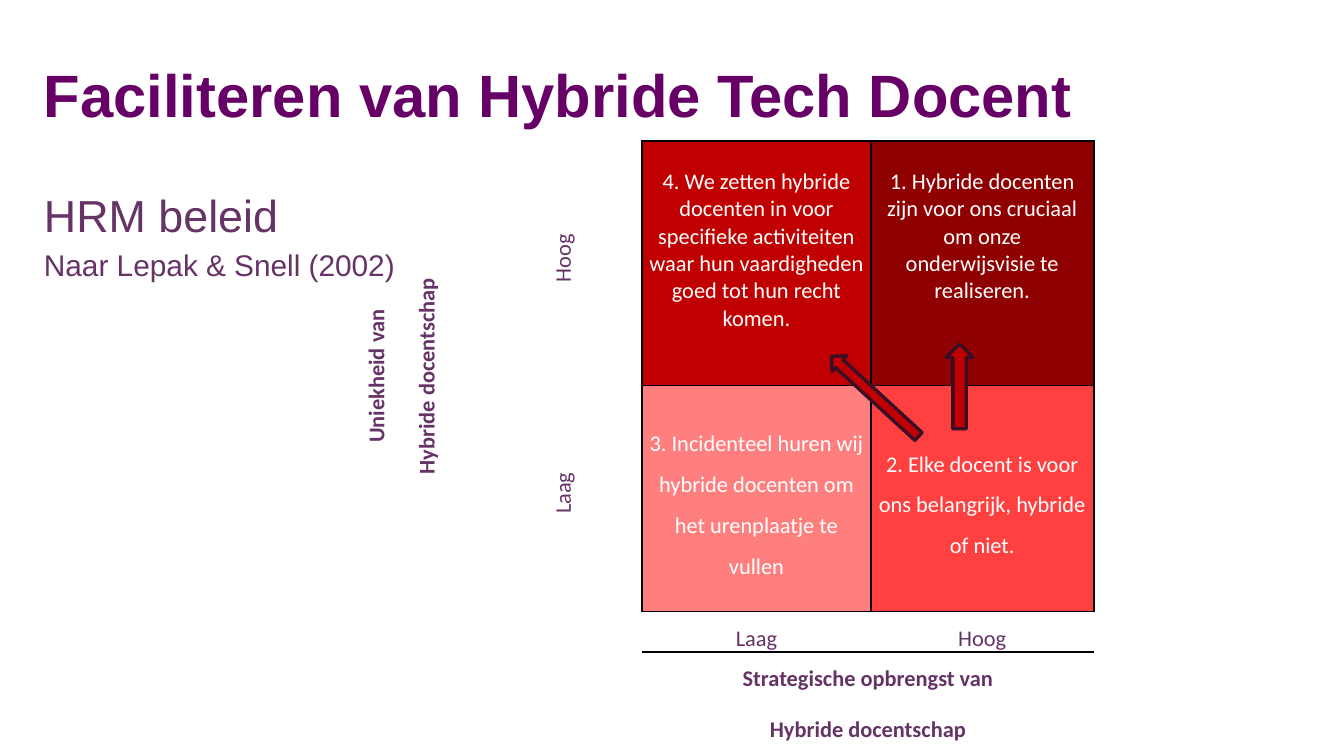
from lxml.etree import SubElement
from pptx import Presentation
from pptx.dml.color import RGBColor
from pptx.enum.shapes import MSO_SHAPE
from pptx.enum.text import MSO_ANCHOR, PP_ALIGN
from pptx.oxml.ns import qn
from pptx.util import Pt

NO_STYLE = "{2D5ABB26-0587-4C30-8999-92F81FD0307C}"


def rgb(value):
    return RGBColor.from_string(value)


class Deck:
    heading_font = "Arial"
    table_font = "Calibri"
    title = "660066"
    ink = "663366"
    white = "FFFFFF"
    red = "C00000"
    outline = "390F26"
    border = "000000"

    def __init__(self, prs):
        self.s = prs.slides.add_slide(prs.slide_layouts[6])

    def run(self, p, text, font, size, color, bold=False):
        r = p.add_run()
        r.text = text
        r.font.name = font
        r.font.size = Pt(size)
        r.font.bold = bold
        r.font.color.rgb = rgb(color)

    def text(self, box, lines, color, bold=False, anchor=MSO_ANCHOR.TOP, inset=3.6):
        tf = self.s.shapes.add_textbox(*map(Pt, box)).text_frame
        tf.word_wrap = True
        tf.vertical_anchor = anchor
        tf.margin_top = Pt(inset)
        for i, (line, size) in enumerate(lines):
            p = tf.paragraphs[0]
            if i:
                p = tf.add_paragraph()
                p.space_before = Pt(size * 0.2)
            self.run(p, line, self.heading_font, size, color, bold)

    def table(self, left, top, cols, rows):
        t = self.s.shapes.add_table(
            len(rows), len(cols), Pt(left), Pt(top), Pt(sum(cols)), Pt(sum(rows))
        ).table
        t.first_row = t.horz_banding = False
        t._tbl.tblPr[0].text = NO_STYLE
        for col, width in zip(t.columns, cols):
            col.width = Pt(width)
        for row, height in zip(t.rows, rows):
            row.height = Pt(height)
        for c in t.iter_cells():
            c.margin_left = c.margin_right = Pt(2.88)
            c.margin_top = c.margin_bottom = 0
            c.fill.background()
            c.text_frame.paragraphs[0]._p.get_or_add_endParaRPr().set("sz", "1200")
        return t

    def cell(self, c, lines, color=ink, bold=False, fill=None, spacing=1.5,
             anchor=MSO_ANCHOR.TOP, inset=0, indent=0, upward=False, sides=""):
        tf = c.text_frame
        c.vertical_anchor = anchor
        c.margin_top = Pt(inset)
        pr = c._tc.get_or_add_tcPr()
        if upward:
            pr.set("vert", "vert270")
        if fill:
            c.fill.solid()
            c.fill.fore_color.rgb = rgb(fill)
        for i, side in enumerate(sides):
            ln = SubElement(pr, qn(f"a:ln{side}"), w=str(Pt(1)))
            solid = SubElement(ln, qn("a:solidFill"))
            SubElement(solid, qn("a:srgbClr"), val=self.border)
            pr.insert(i, ln)
        for i, line in enumerate(lines):
            p = tf.paragraphs[0]
            if i:
                p = tf.add_paragraph()
                p.space_before = Pt(5)
            p.alignment = PP_ALIGN.CENTER
            p.line_spacing = spacing
            if indent:
                p._p.get_or_add_pPr().set("marL", str(Pt(indent)))
            self.run(p, line, self.table_font, 12, color, bold)

    def arrow(self, box, rotation=0):
        sp = self.s.shapes.add_shape(MSO_SHAPE.UP_ARROW, *map(Pt, box))
        sp.rotation = rotation
        sp.shadow.inherit = False
        sp.fill.solid()
        sp.fill.fore_color.rgb = rgb(self.red)
        sp.line.color.rgb = rgb(self.outline)
        sp.line.width = Pt(1.75)


def main():
    prs = Presentation()
    prs.slide_width, prs.slide_height = Pt(720), Pt(405)
    d = Deck(prs)

    d.text((16.5, 94.3, 687, 224), [("HRM beleid", 24), ("Naar Lepak & Snell (2002)", 16)],
           d.ink, inset=6.1)
    d.text((16.5, 16.5, 687, 67.7), [("Faciliteren van Hybride Tech Docent", 32)],
           d.title, True, MSO_ANCHOR.MIDDLE)

    t = d.table(187.2, 75.6, (100, 56.9, 122.4, 119.5), (131, 121, 20.9, 46))
    t.cell(0, 0).merge(t.cell(1, 0))
    t.cell(3, 2).merge(t.cell(3, 3))
    d.cell(t.cell(0, 0), ["Uniekheid van", "Hybride docentschap"], bold=True,
           anchor=MSO_ANCHOR.BOTTOM, upward=True)
    for row, level in enumerate(("Hoog", "Laag")):
        d.cell(t.cell(row, 1), [level], fill=d.white, indent=5.76, upward=True, sides="R")
        d.cell(t.cell(2, 3 - row), [level], sides="T")
        d.cell(t.cell(2 + row, 1), [], fill=d.white)
    d.cell(t.cell(3, 2), ["Strategische opbrengst van", "Hybride docentschap"], bold=True)

    upper = dict(spacing=1, inset=14.65)
    lower = dict(anchor=MSO_ANCHOR.MIDDLE)
    quadrants = [
        (0, 2, d.red, upper, "4. We zetten hybride docenten in voor specifieke activiteiten "
                             "waar hun vaardigheden goed tot hun recht komen."),
        (0, 3, "8F0000", upper, "1. Hybride docenten zijn voor ons cruciaal om onze "
                                "onderwijsvisie te realiseren."),
        (1, 2, "FF7F7F", lower, "3. Incidenteel huren wij hybride docenten om het "
                                "urenplaatje te vullen"),
        (1, 3, "FF4040", lower, "2. Elke docent is voor ons belangrijk, hybride of niet."),
    ]
    for row, col, fill, layout, line in quadrants:
        d.cell(t.cell(row, col), [line], d.white, fill=fill, sides="LRTB", **layout)

    d.arrow((506.9, 184.3, 14.4, 45.4))
    d.arrow((463, 180.7, 11.5, 63.4), 312.6)
    prs.save("out.pptx")


if __name__ == "__main__":
    main()
